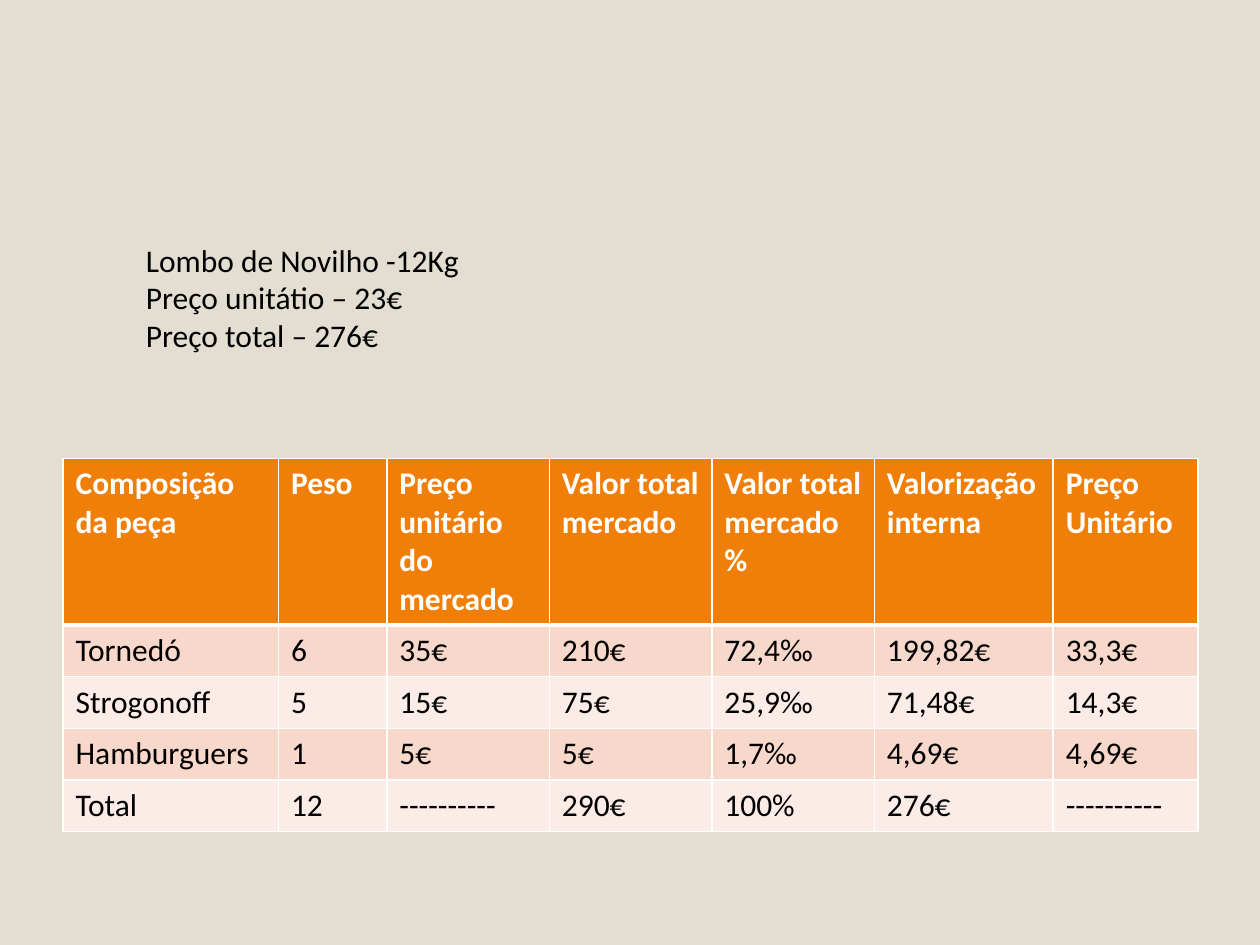
from lxml.etree import SubElement
from pptx import Presentation
from pptx.dml.color import RGBColor
from pptx.oxml.ns import qn
from pptx.util import Inches, Pt

BACKGROUND = RGBColor(0xE3, 0xDE, 0xD1)
ORANGE = RGBColor(0xF0, 0x7F, 0x09)
BANDS = [RGBColor(0xFC, 0xEC, 0xE7), RGBColor(0xF9, 0xD8, 0xCC)]
WHITE = RGBColor(0xFF, 0xFF, 0xFF)
BLACK = RGBColor(0, 0, 0)

COLUMN_WIDTHS = [1.71, 0.86, 1.29, 1.29, 1.29, 1.42, 1.15]
HEADER_HEIGHT, ROW_HEIGHT = 1.28, 0.41
ROWS = [
    ["Composição da peça", "Peso", "Preço unitário do mercado", "Valor total mercado",
     "Valor total mercado %", "Valorização interna", "Preço Unitário"],
    ["Tornedó", "6", "35€", "210€", "72,4‰", "199,82€", "33,3€"],
    ["Strogonoff", "5", "15€", "75€", "25,9‰", "71,48€", "14,3€"],
    ["Hamburguers", "1", "5€", "5€", "1,7‰", "4,69€", "4,69€"],
    ["Total", "12", "----------", "290€", "100%", "276€", "----------"],
]
SUMMARY = ["Lombo de Novilho -12Kg", "Preço unitátio – 23€", "Preço total – 276€"]


def format_text(frame, color, bold=False):
    for para in frame.paragraphs:
        for span in para.runs:
            span.font.name = "Calibri"
            span.font.size = Pt(18)
            span.font.bold = bold
            span.font.color.rgb = color


def add_borders(cell, top, bottom):
    properties = cell._tc.get_or_add_tcPr()
    sides = [("a:lnL", 1), ("a:lnR", 1), ("a:lnT", top), ("a:lnB", bottom)]
    for position, (side, width) in enumerate(sides):
        line = SubElement(properties, qn(side), w=str(Pt(width)))
        fill = SubElement(line, qn("a:solidFill"))
        SubElement(fill, qn("a:srgbClr"), val=str(WHITE))
        properties.insert(position, line)  # borders come before the fill


# Page
deck = Presentation()
deck.slide_width, deck.slide_height = Inches(10), Inches(7.5)
page = deck.slides.add_slide(deck.slide_layouts[6])
page.background.fill.solid()
page.background.fill.fore_color.rgb = BACKGROUND

# Price table
table = page.shapes.add_table(
    len(ROWS), len(COLUMN_WIDTHS), Inches(0.5), Inches(3.64), Inches(9),
    Inches(HEADER_HEIGHT + ROW_HEIGHT * (len(ROWS) - 1))).table
for column, width in zip(table.columns, COLUMN_WIDTHS):
    column.width = Inches(width)
for row_number, values in enumerate(ROWS):
    header = row_number == 0
    table.rows[row_number].height = Inches(HEADER_HEIGHT if header else ROW_HEIGHT)
    for column_number, value in enumerate(values):
        cell = table.cell(row_number, column_number)
        cell.text_frame.text = value
        format_text(cell.text_frame, WHITE if header else BLACK, bold=header)
        cell.fill.solid()
        cell.fill.fore_color.rgb = ORANGE if header else BANDS[row_number % 2]
        add_borders(cell, top=3 if row_number == 1 else 1, bottom=3 if header else 1)

# Purchase summary
box = page.shapes.add_textbox(Inches(1.06), Inches(1.86), Inches(7.38), Inches(1.01))
box.text_frame.word_wrap = True
box.text_frame.text = "\n".join(SUMMARY)
format_text(box.text_frame, BLACK)

deck.save("out.pptx")
